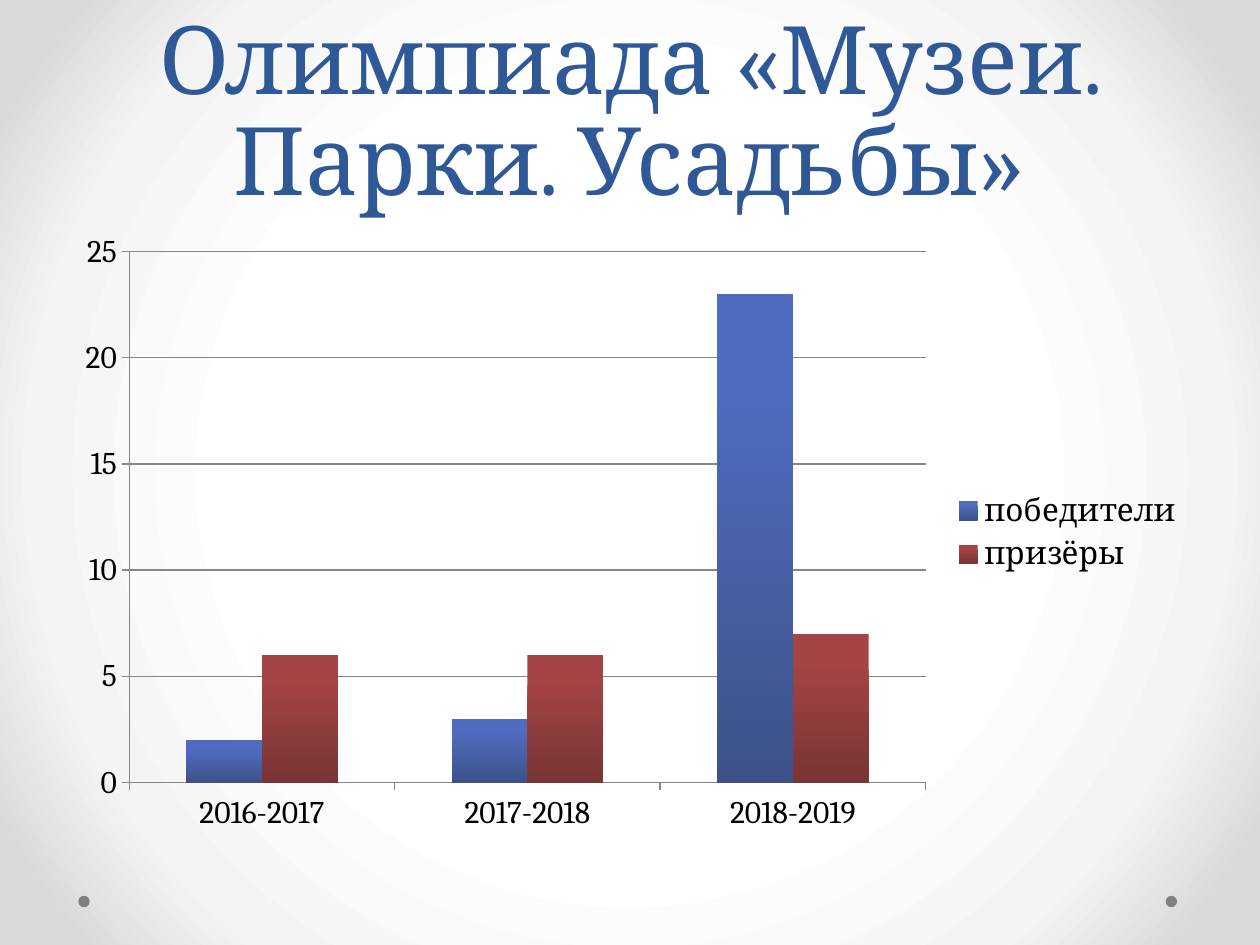
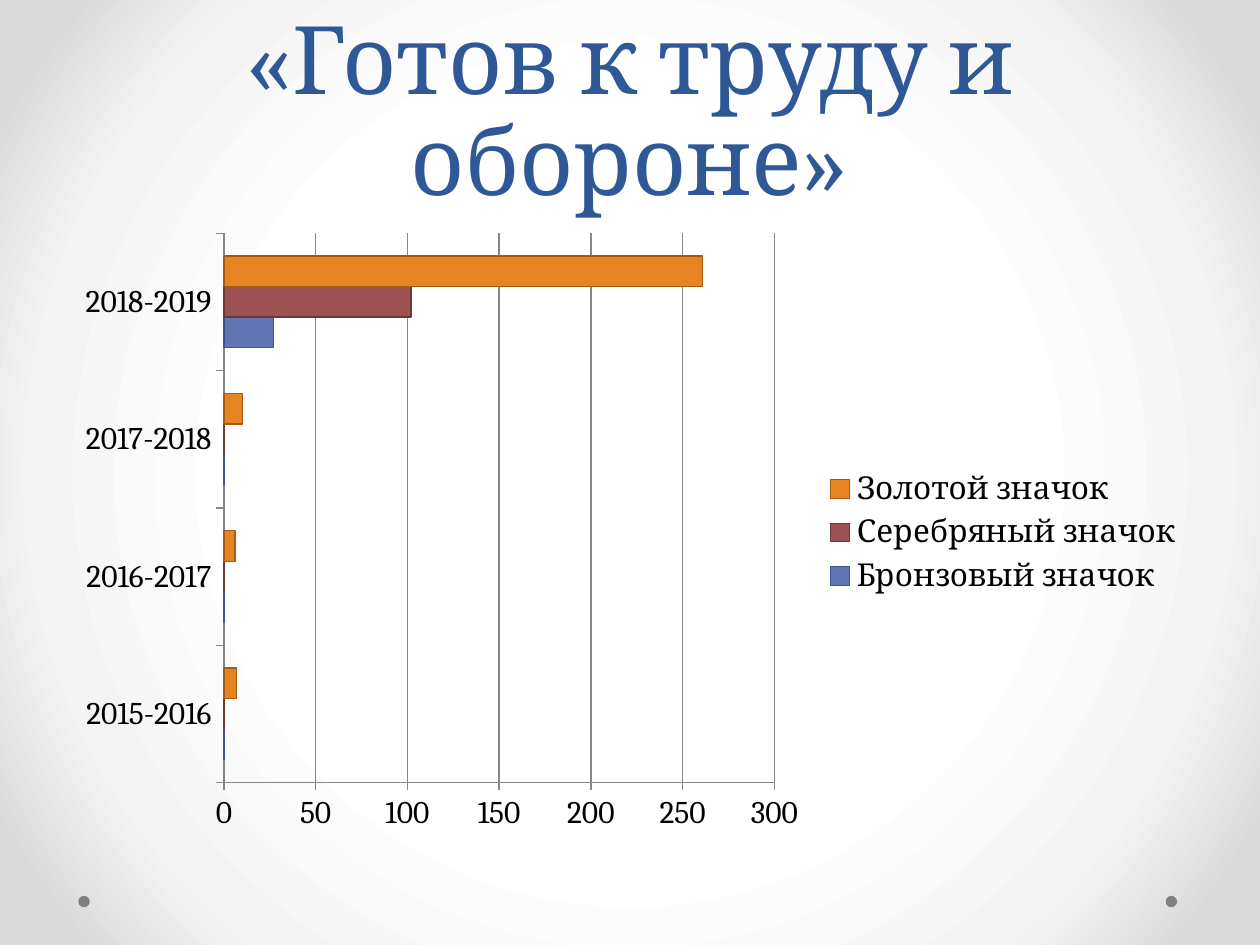
from dataclasses import dataclass
from typing import Any

from pptx import Presentation
from pptx.chart.data import CategoryChartData
from pptx.dml.color import RGBColor
from pptx.enum.chart import XL_CHART_TYPE, XL_LEGEND_POSITION, XL_TICK_MARK
from pptx.enum.shapes import MSO_SHAPE
from pptx.enum.text import MSO_ANCHOR, PP_ALIGN
from pptx.oxml import parse_xml
from pptx.oxml.ns import nsdecls
from pptx.util import Cm, Pt

COLUMN = XL_CHART_TYPE.COLUMN_CLUSTERED
BAR = XL_CHART_TYPE.BAR_CLUSTERED
RIGHT = XL_LEGEND_POSITION.RIGHT
OUTSIDE, NO_TICK = XL_TICK_MARK.OUTSIDE, XL_TICK_MARK.NONE
OVAL = MSO_SHAPE.OVAL
BOTTOM = MSO_ANCHOR.BOTTOM
CENTER = PP_ALIGN.CENTER


@dataclass(frozen=True)
class Theme:
    """Colours, font and type sizes that all slides share."""
    font: str = "Cambria"
    title: str = "2F5897"
    text: str = "000000"
    dot: str = "808080"
    grid: str = "868686"
    back: tuple = ((50, "FFFFFF"), (76, "F4F4F4"), (92, "DADADA"))
    big: Pt = Pt(54)
    lead: Pt = Pt(58)
    small: Pt = Pt(18)
    hair: Pt = Pt(0.75)


@dataclass(frozen=True)
class Tone:
    """Colours of one series: flat fill, outline, and shaded ends."""
    flat: str
    edge: str
    top: str = ""
    base: str = ""


@dataclass(frozen=True)
class Series:
    """A named row of chart values."""
    name: str
    vals: tuple
    tone: Tone


@dataclass(frozen=True)
class Page:
    """One slide: a title over a chart."""
    title: str
    kind: Any
    cats: tuple
    rows: tuple
    shaded: bool = False


THEME = Theme()
BLUE = Tone("6076B4", "3F5590", "506CC0", "3D5288")
RED = Tone("9C5252", "6D3838", "A44444", "793434")
GOLD = Tone("E68422", "A45C12")
YEARS = ("2015-2016", "2016-2017", "2017-2018", "2018-2019")
PAGES = (
    Page("Олимпиада «Музеи. Парки. Усадьбы»", COLUMN, YEARS[1:], (
        Series("победители", (2, 3, 23), BLUE),
        Series("призёры", (6, 6, 7), RED),
    ), shaded=True),
    Page("«Готов к труду и обороне»", BAR, YEARS, (
        Series("Бронзовый значок", (0, 0, 0, 27), BLUE),
        Series("Серебряный значок", (0, 0, 0, 102), RED),
        Series("Золотой значок", (7, 6, 10, 261), GOLD),
    )),
)


def put(item: Any, **vals: Any) -> None:
    """Set each named value on the item."""
    for name, val in vals.items():
        setattr(item, name, val)


def rgb(code: str) -> RGBColor:
    """Turn a hex code into a colour."""
    return RGBColor.from_string(code)


def paint(fill: Any, code: str) -> None:
    """Give a fill one solid colour."""
    fill.solid()
    fill.fore_color.rgb = rgb(code)


def style(font: Any, size: Pt, code: str) -> None:
    """Set face, size and colour of a font."""
    put(font, name=THEME.font, size=size)
    font.color.rgb = rgb(code)


def rule(line: Any, code: str) -> None:
    """Draw a thin line in one colour."""
    line.width = THEME.hair
    line.color.rgb = rgb(code)


def shade(fill: Any, tone: Tone) -> None:
    """Blend a fill from top to base."""
    fill.gradient()
    fill.gradient_angle = 270
    ends = ((0.2, tone.top), (1, tone.base))
    for stop, (place, code) in zip(fill.gradient_stops, ends):
        stop.position = place
        stop.color.rgb = rgb(code)


def glow(slide: Any) -> None:
    """Lay a round gradient behind the slide."""
    stops = "".join(
        f'<a:gs pos="{place * 1000}"><a:srgbClr val="{code}"/></a:gs>'
        for place, code in THEME.back)
    slide.element.cSld.insert(0, parse_xml(
        f'<p:bg {nsdecls("p", "a")}><p:bgPr><a:gradFill rotWithShape="1">'
        f'<a:gsLst>{stops}</a:gsLst><a:path path="circle">'
        '<a:fillToRect l="50000" t="50000" r="50000" b="50000"/></a:path>'
        '</a:gradFill><a:effectLst/></p:bgPr></p:bg>'))


def dots(slide: Any) -> None:
    """Draw the two footer dots."""
    for left in (23.5, 1.58):
        dot = slide.shapes.add_shape(
            OVAL, Cm(left), Cm(18.06), Cm(0.23), Cm(0.23))
        dot.shadow.inherit = False
        paint(dot.fill, THEME.dot)
        dot.line.fill.background()


def head(slide: Any, text: str) -> None:
    """Write the slide title."""
    box = slide.shapes.add_textbox(Cm(1.27), 0, Cm(22.86), Cm(4.45))
    put(box.text_frame, word_wrap=True, vertical_anchor=BOTTOM)
    para = box.text_frame.paragraphs[0]
    put(para, text=text, alignment=CENTER, line_spacing=THEME.lead)
    style(para.runs[0].font, THEME.big, THEME.title)


def plot(slide: Any, page: Page) -> None:
    """Draw the chart of a page."""
    data = CategoryChartData()
    data.categories = page.cats
    for row in page.rows:
        data.add_series(row.name, row.vals)
    chart = slide.shapes.add_chart(
        page.kind, Cm(1.27), Cm(4.45), Cm(22.86), Cm(12.57), data).chart
    put(chart, has_title=False, has_legend=True)
    put(chart.legend, position=RIGHT, include_in_layout=False)
    style(chart.font, THEME.small, THEME.text)
    for axis in (chart.category_axis, chart.value_axis):
        put(axis, major_tick_mark=OUTSIDE, minor_tick_mark=NO_TICK)
        rule(axis.format.line, THEME.grid)
    chart.value_axis.has_major_gridlines = True
    rule(chart.value_axis.major_gridlines.format.line, THEME.grid)
    band = chart.plots[0]
    put(band, gap_width=150, overlap=0, vary_by_categories=False)
    for bars, row in zip(band.series, page.rows):
        bars.invert_if_negative = False
        if page.shaded:
            shade(bars.format.fill, row.tone)
            bars.format.line.fill.background()
        else:
            paint(bars.format.fill, row.tone.flat)
            rule(bars.format.line, row.tone.edge)


def main() -> None:
    """Build and save the deck."""
    deck = Presentation()
    put(deck, slide_width=Cm(25.4), slide_height=Cm(19.05))
    for page in PAGES:
        slide = deck.slides.add_slide(deck.slide_layouts[6])
        glow(slide)
        dots(slide)
        head(slide, page.title)
        plot(slide, page)
    deck.save("out.pptx")


if __name__ == "__main__":
    main()
